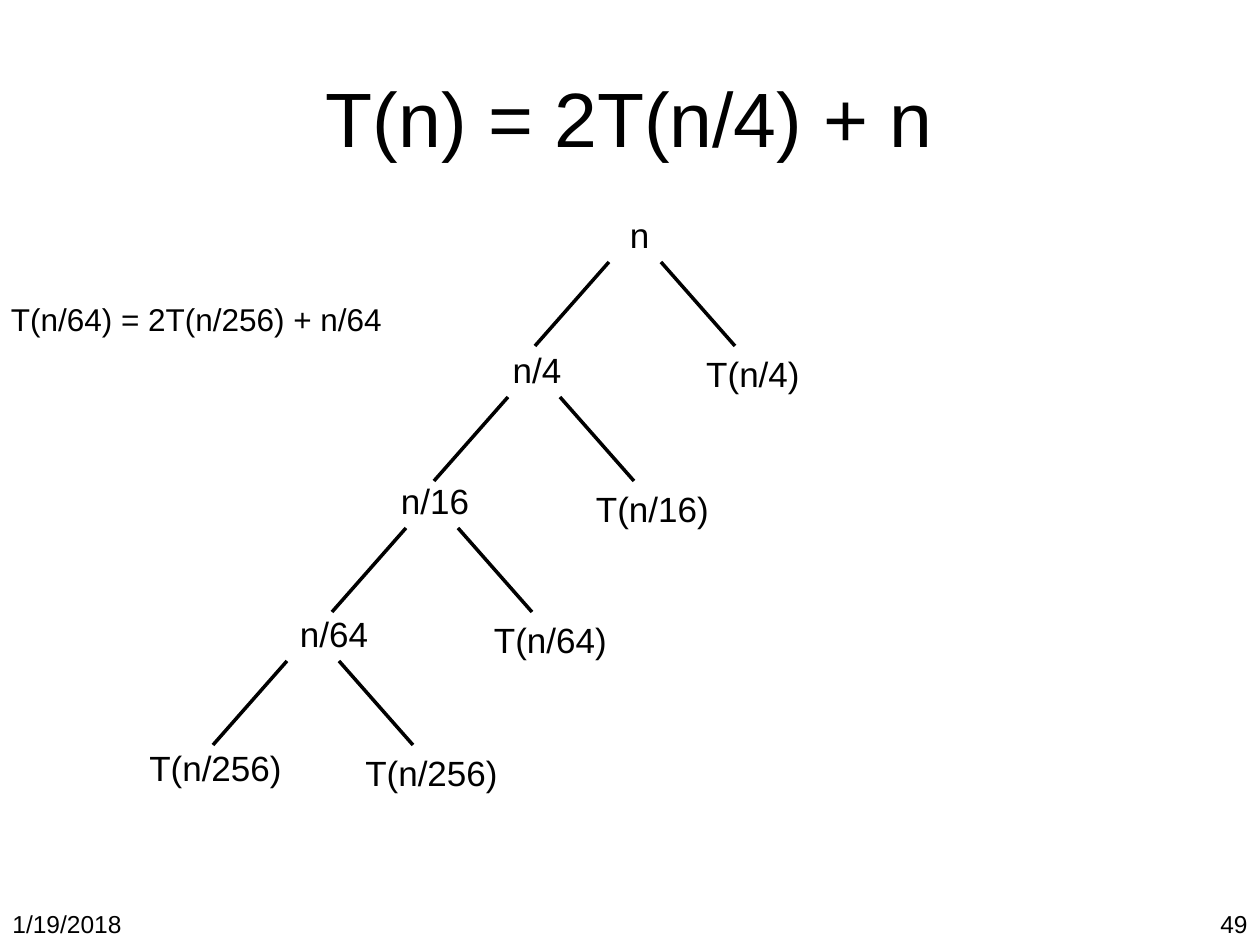
from dataclasses import dataclass

from lxml.etree import SubElement
from pptx import Presentation
from pptx.dml.color import RGBColor
from pptx.enum.shapes import MSO_CONNECTOR as Connector
from pptx.enum.text import MSO_ANCHOR as Anchor, MSO_AUTO_SIZE as AutoSize, PP_ALIGN as Align
from pptx.oxml.ns import qn
from pptx.util import Emu, Pt

SCALE = 914400 / 126
COLOURS = {"ink": "000000", "paper": "FFFFFF"}
FONT = "Arial"
LABEL_HEIGHT = 55
BRANCH_INNER, BRANCH_OUTER, BRANCH_HEIGHT = 26, 100, 84
RIGHT_LABEL_OFFSET = 118


@dataclass
class Label:
    text: str
    left: int
    top: int
    width: int
    height: int
    size: int = 20
    align: Align = Align.CENTER
    wrap: bool = False


@dataclass
class Level:
    cost: str
    cost_x: int
    cost_width: int
    call: str
    call_width: int
    apex_x: int
    apex_y: int


LEVELS = [
    Level("n", 639, 45, "T(n/4)", 120, 635, 262),
    Level("n/4", 537, 74, "T(n/16)", 139, 534, 397),
    Level("n/16", 435, 94, "T(n/64)", 139, 432, 528),
    Level("n/64", 334, 94, "T(n/256)", 159, 313, 661),
]
LABELS = [
    Label("1/19/2018", 0, 903, 294, 42, 14, Align.LEFT, True),
    Label("49", 966, 903, 294, 42, 14, Align.RIGHT, True),
    Label("T(n/256)", 136, 740, 159, LABEL_HEIGHT),
    Label("T(n/64) = 2T(n/256) + n/64", -4, 294, 401, 50, 18),
]


def px(length: int) -> Emu:
    return Emu(round(length * SCALE))


def colour(name: str) -> RGBColor:
    return RGBColor.from_string(COLOURS[name])


def apply(target, values: dict) -> None:
    for name, value in values.items():
        setattr(target, name, value)


def write(frame, text: str, size: int, align: Align) -> None:
    para = frame.paragraphs[0]
    para.alignment = align
    span = para.add_run()
    span.text = text
    apply(span.font, {"name": FONT, "size": Pt(size)})
    span.font.color.rgb = colour("ink")


def draw_title(page, text: str) -> None:
    title = page.shapes.title
    apply(title, {"left": px(63), "top": px(38), "width": px(1134), "height": px(157)})
    apply(title.text_frame, {"vertical_anchor": Anchor.MIDDLE, "word_wrap": True})
    write(title.text_frame, text, 44, Align.CENTER)


def draw_label(page, label: Label) -> None:
    box = page.shapes.add_textbox(*map(px, (label.left, label.top, label.width, label.height)))
    fit = AutoSize.NONE if label.wrap else AutoSize.SHAPE_TO_FIT_TEXT
    apply(box.text_frame, {"word_wrap": label.wrap, "auto_size": fit})
    write(box.text_frame, label.text, label.size, label.align)


def draw_branch(page, x: int, y: int, side: int) -> None:
    ends = (x + side * BRANCH_INNER, y, x + side * BRANCH_OUTER, y + BRANCH_HEIGHT)
    branch = page.shapes.add_connector(Connector.STRAIGHT, *map(px, ends))
    branch.line.color.rgb = colour("ink")
    branch.line.width = Pt(2)
    SubElement(branch._element.spPr, qn("a:effectLst"))


def draw_level(page, level: Level) -> None:
    for side in (-1, 1):
        draw_branch(page, level.apex_x, level.apex_y, side)
    call_x = level.apex_x + RIGHT_LABEL_OFFSET
    call_top = level.apex_y + BRANCH_HEIGHT
    cost_top = level.apex_y - LABEL_HEIGHT
    for text, x, top, width in (
        (level.cost, level.cost_x, cost_top, level.cost_width),
        (level.call, call_x, call_top, level.call_width),
    ):
        draw_label(page, Label(text, x - width // 2, top, width, LABEL_HEIGHT))


def main() -> None:
    deck = Presentation()
    apply(deck, {"slide_width": px(1260), "slide_height": px(945)})
    page = deck.slides.add_slide(deck.slide_layouts[5])
    page.background.fill.solid()
    page.background.fill.fore_color.rgb = colour("paper")
    draw_title(page, "T(n) = 2T(n/4) + n")
    for level in LEVELS:
        draw_level(page, level)
    for label in LABELS:
        draw_label(page, label)
    deck.save("out.pptx")


if __name__ == "__main__":
    main()
